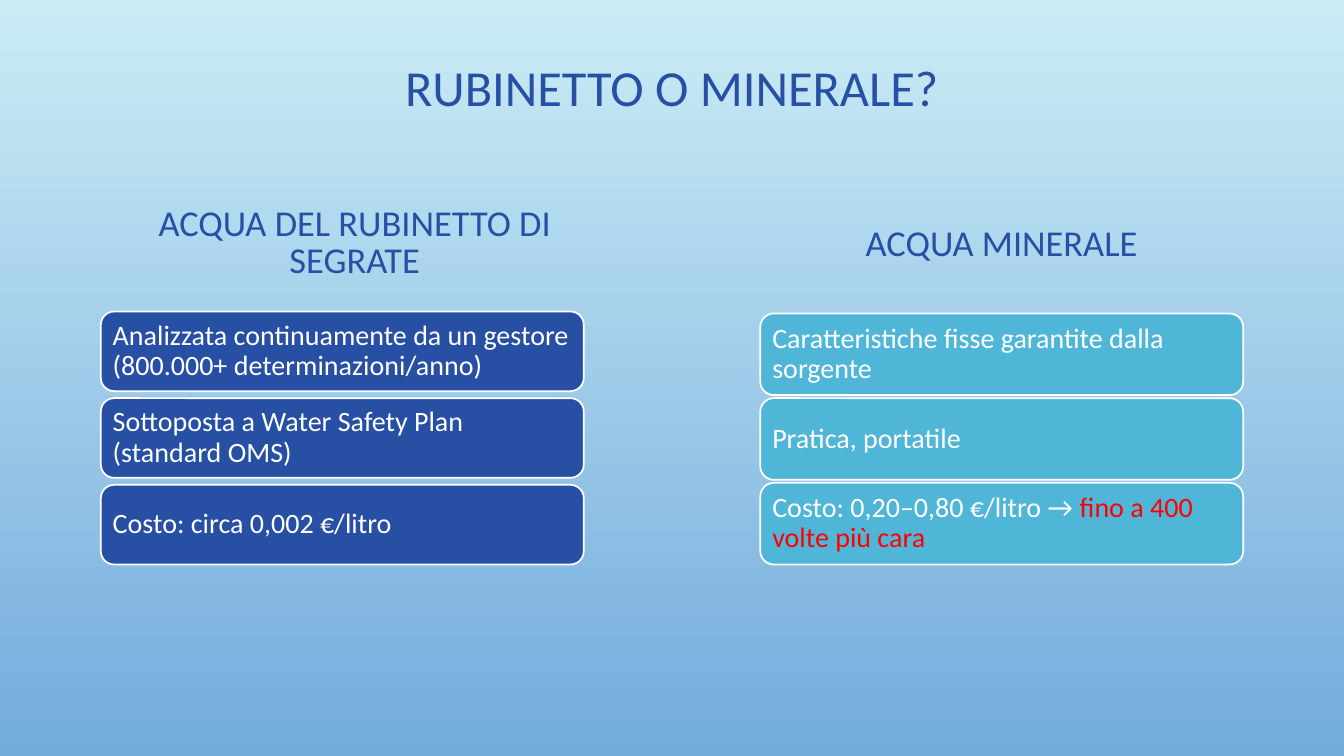
from dataclasses import dataclass

import pptx
import pptx.dml.color
import pptx.enum.shapes
import pptx.enum.text
import pptx.util

Inches = pptx.util.Inches
ALIGN = pptx.enum.text.PP_ALIGN
ANCHOR = pptx.enum.text.MSO_ANCHOR

COLORS = {
    "sky": "CBECF5",
    "water": "73ABDD",
    "navy": "274FA4",
    "aqua": "50B6D7",
    "white": "FFFFFF",
    "alert": "FF0000",
}


@dataclass
class Fact:
    text: str
    warning: str = ""


@dataclass
class WaterColumn:
    heading: str
    heading_box: tuple[float, float, float, float]
    line_spacing: float
    color: str
    left: float
    top: float
    height: float
    pitch: float
    facts: list[Fact]


CARD_WIDTH = 4.79
COLUMNS = [
    WaterColumn(
        "ACQUA DEL RUBINETTO DI SEGRATE", (1.25, 2.1, 4.54, 0.74), 0.85,
        "navy", 1, 3.09, 0.79, 0.86,
        [
            Fact("Analizzata continuamente da un gestore (800.000+ determinazioni/anno)"),
            Fact("Sottoposta a Water Safety Plan (standard OMS)"),
            Fact("Costo: circa 0,002 €/litro"),
        ],
    ),
    WaterColumn(
        "ACQUA MINERALE", (7.54, 1.93, 4.79, 0.74), 1.0,
        "aqua", 7.54, 3.11, 0.81, 0.84,
        [
            Fact("Caratteristiche fisse garantite dalla sorgente"),
            Fact("Pratica, portatile"),
            Fact("Costo: 0,20–0,80 €/litro → ", "fino a 400 volte più cara"),
        ],
    ),
]


def rgb(name: str) -> pptx.dml.color.RGBColor:
    return pptx.dml.color.RGBColor.from_string(COLORS[name])


def format_text(shape, size: float, color: str, align, anchor, spacing: float) -> None:
    frame = shape.text_frame
    frame.word_wrap = True
    frame.auto_size = pptx.enum.text.MSO_AUTO_SIZE.NONE
    frame.vertical_anchor = anchor
    paragraph = frame.paragraphs[0]
    paragraph.alignment = align
    paragraph.line_spacing = spacing
    paragraph.font.name = "Calibri"
    paragraph.font.size = pptx.util.Pt(size)
    paragraph.font.color.rgb = rgb(color)


def draw_heading(slide, column: WaterColumn) -> None:
    heading = slide.shapes.add_textbox(*map(Inches, column.heading_box))
    heading.text_frame.text = column.heading
    format_text(heading, 26, "navy", ALIGN.CENTER, ANCHOR.BOTTOM, column.line_spacing)


def draw_fact(slide, column: WaterColumn, row: int, fact: Fact) -> None:
    card = slide.shapes.add_shape(
        pptx.enum.shapes.MSO_SHAPE.ROUNDED_RECTANGLE,
        Inches(column.left), Inches(column.top + row * column.pitch),
        Inches(CARD_WIDTH), Inches(column.height),
    )
    card.shadow.inherit = False
    card.fill.solid()
    card.fill.fore_color.rgb = rgb(column.color)
    card.line.color.rgb = rgb("white")
    card.line.width = pptx.util.Pt(1.25)

    frame = card.text_frame
    frame.margin_left = frame.margin_right = Inches(0.08)
    frame.margin_top = frame.margin_bottom = Inches(0.08)
    frame.text = fact.text
    format_text(card, 20, "white", ALIGN.LEFT, ANCHOR.MIDDLE, 0.9)
    if fact.warning:
        warning = frame.paragraphs[0].add_run()
        warning.text = fact.warning
        warning.font.color.rgb = rgb("alert")


def main() -> None:
    deck = pptx.Presentation()
    deck.slide_width, deck.slide_height = Inches(13.33), Inches(7.5)
    slide = deck.slides.add_slide(deck.slide_layouts[5])

    # Background: vertical gradient from sky to water
    backdrop = slide.background.fill
    backdrop.gradient()
    backdrop.gradient_angle = 270
    for stop, name, position in zip(backdrop.gradient_stops, ("sky", "water"), (0, 1)):
        stop.color.rgb = rgb(name)
        stop.position = position

    # Title
    title = slide.shapes.title
    title.left, title.top = Inches(1), Inches(0.02)
    title.width, title.height = Inches(11.33), Inches(1.75)
    title.text_frame.text = "RUBINETTO O MINERALE?"
    format_text(title, 36, "navy", ALIGN.CENTER, ANCHOR.MIDDLE, 0.9)

    # Comparison columns
    for column in COLUMNS:
        draw_heading(slide, column)
        for row, fact in enumerate(column.facts):
            draw_fact(slide, column, row, fact)

    deck.save("out.pptx")


if __name__ == "__main__":
    main()
